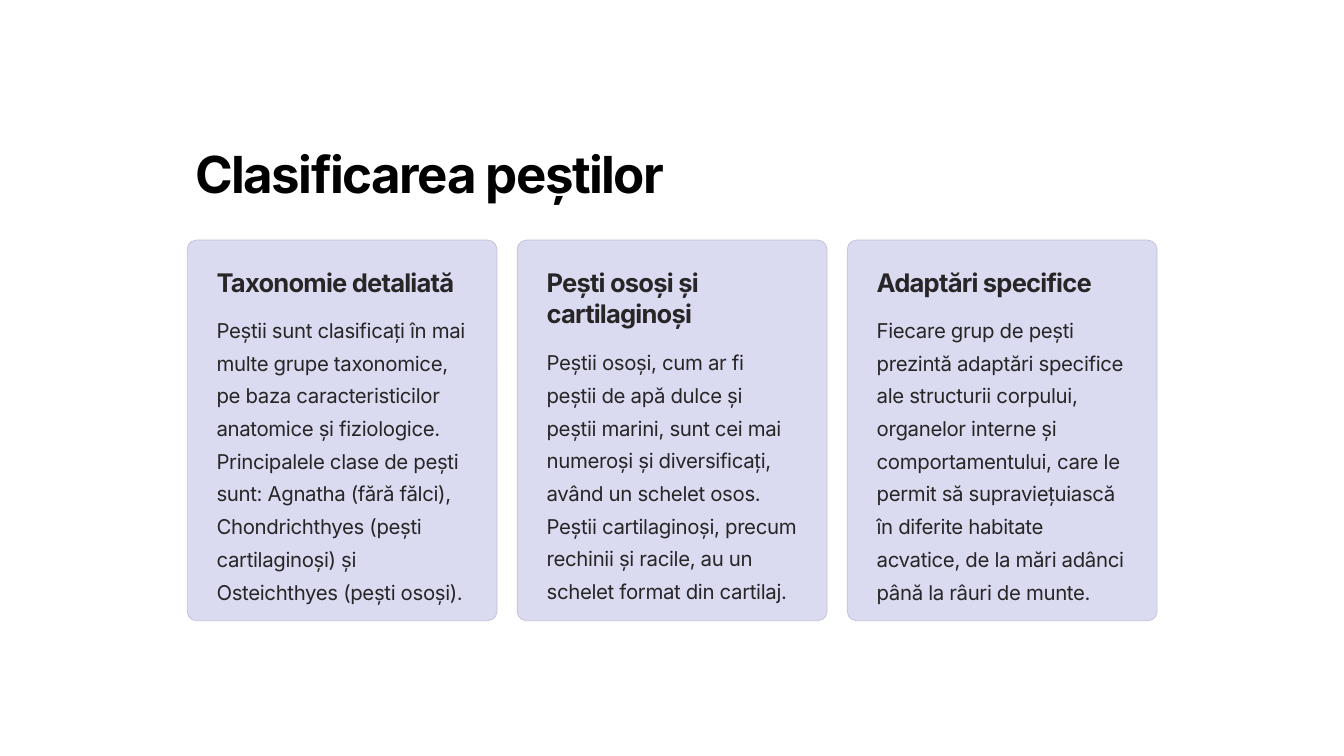
"""Build a slide with a title and three cards on the classes of fish."""
import dataclasses

import pptx
import pptx.dml.color
import pptx.enum.shapes
import pptx.oxml.ns
import pptx.util

Cm = pptx.util.Cm
Pt = pptx.util.Pt
RGB = pptx.dml.color.RGBColor.from_string
KIND = pptx.enum.shapes.MSO_SHAPE


@dataclasses.dataclass(frozen=True)
class Theme:
    font: str = "Inter"
    page: str = "FFFFFF"
    black: str = "000000"
    ink: str = "272525"
    card: str = "DADBF1"
    edge: str = "C0C1D7"
    title: float = 43.7
    head: float = 21.9
    body: float = 17.5


theme = Theme()
deck = pptx.Presentation()
deck.slide_width, deck.slide_height = Cm(40.64), Cm(22.86)
slide = deck.slides.add_slide(deck.slide_layouts[6])


def write(text, *, left, top, width, height, size, lead, space,
          color=theme.ink, bold=False, wrap=True):
    box = slide.shapes.add_textbox(Cm(left), Cm(top), Cm(width), Cm(height))
    box.text_frame.word_wrap = wrap
    para = box.text_frame.paragraphs[0]
    para.line_spacing = Pt(lead)
    run = para.add_run()
    run.text = text
    run.font.name = theme.font
    run.font.size = Pt(size)
    run.font.bold = bold
    run.font.color.rgb = RGB(color)
    for props in box.element.iter(pptx.oxml.ns.qn("a:rPr")):
        props.set("spc", str(round(space * 100)))


def panel(kind, left, top, width, height, color):
    shape = slide.shapes.add_shape(kind, Cm(left), Cm(top), Cm(width), Cm(height))
    shape.shadow.inherit = False
    shape.fill.solid()
    shape.fill.fore_color.rgb = RGB(color)
    shape.line.fill.background()
    return shape


panel(KIND.RECTANGLE, 0, 0, 40.64, 22.86, theme.page)

edge = 5.66
write("Clasificarea peștilor", left=edge, top=4.09, width=15.44, height=1.93,
      size=theme.title, lead=54.7, space=-1.3, color=theme.black,
      bold=True, wrap=False)

cards = [
    ("Taxonomie detaliată", 1,
     "Peștii sunt clasificați în mai multe grupe taxonomice, pe baza "
     "caracteristicilor anatomice și fiziologice. Principalele clase de pești "
     "sunt: Agnatha (fără fălci), Chondrichthyes (pești cartilaginoși) și "
     "Osteichthyes (pești osoși)."),
    ("Pești osoși și cartilaginoși", 2,
     "Peștii osoși, cum ar fi peștii de apă dulce și peștii marini, sunt cei "
     "mai numeroși și diversificați, având un schelet osos. Peștii "
     "cartilaginoși, precum rechinii și racile, au un schelet format din "
     "cartilaj."),
    ("Adaptări specifice", 1,
     "Fiecare grup de pești prezintă adaptări specifice ale structurii "
     "corpului, organelor interne și comportamentului, care le permit să "
     "supraviețuiască în diferite habitate acvatice, de la mări adânci până "
     "la râuri de munte."),
]
top, wide, high = 7.26, 9.37, 11.51
step, pad, gap, row = 9.98, 0.64, 0.38, 0.97
inner = 8.08

for index, (head, rows, body) in enumerate(cards):
    left = edge + index * step
    card = panel(KIND.ROUNDED_RECTANGLE, left, top, wide, high, theme.card)
    card.adjustments[0] = 0.03
    card.line.color.rgb = RGB(theme.edge)
    card.line.width = Pt(0.6)

    tall = rows * row
    write(head, left=left + pad, top=top + pad,
          width=inner if rows > 1 else 7.72, height=tall, size=theme.head,
          lead=27.3, space=-0.7, bold=True, wrap=rows > 1)
    start = top + pad + tall + gap
    write(body, left=left + pad, top=start, width=inner,
          height=top + high - pad - start, size=theme.body,
          lead=28, space=-0.3)

deck.save("out.pptx")
